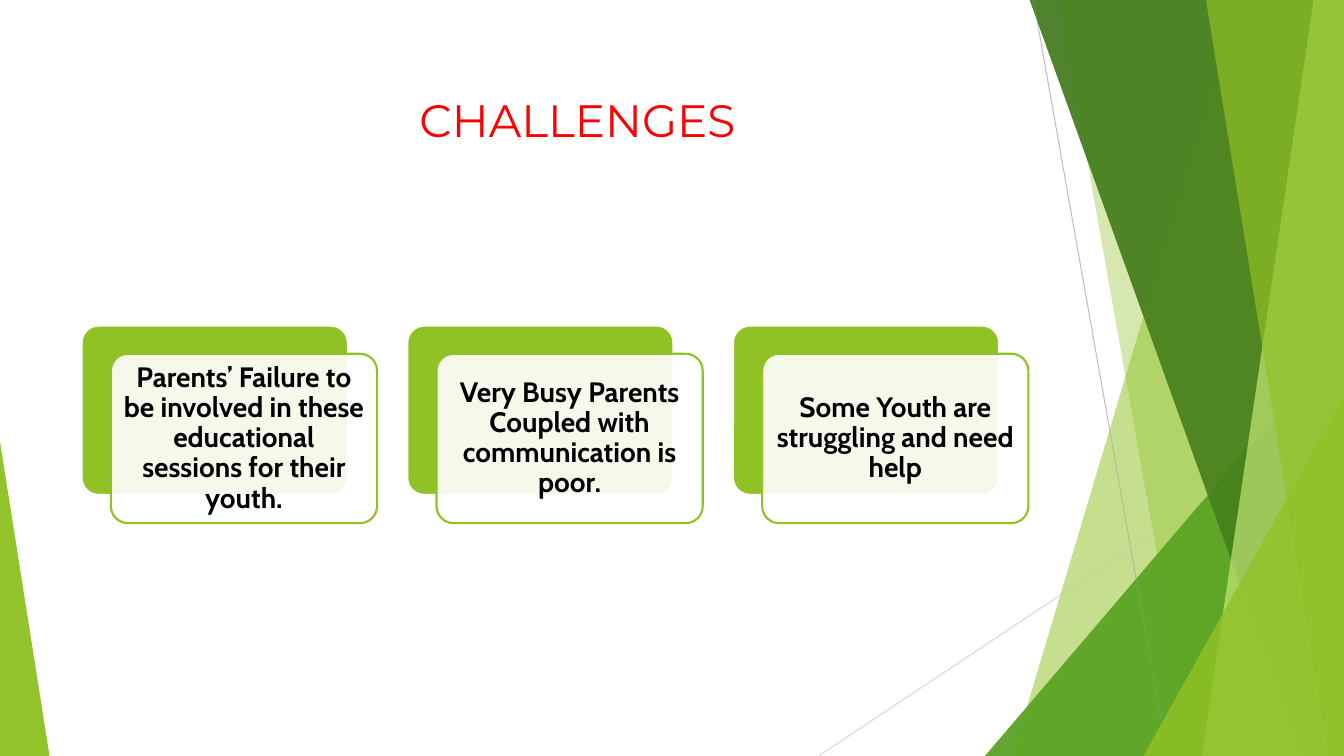
"""Build the Challenges slide with its faceted green backdrop and three cards."""
from lxml import etree
from pptx import Presentation
from pptx.dml.color import RGBColor
from pptx.enum.shapes import MSO_CONNECTOR, MSO_SHAPE as Shape
from pptx.enum.text import MSO_ANCHOR as Anchor, MSO_AUTO_SIZE as AutoSize, PP_ALIGN as Align
from pptx.oxml.ns import qn
from pptx.util import Inches, Pt

LIME = RGBColor(0x90, 0xC2, 0x26)
GREEN = RGBColor(0x54, 0xA0, 0x21)
DARK_GREEN = RGBColor(0x3F, 0x78, 0x19)
PALE_LIME = RGBColor(0xC0, 0xE4, 0x74)
GRAY = RGBColor(0xBF, 0xBF, 0xBF)
LIGHT_GRAY = RGBColor(0xD9, 0xD9, 0xD9)
WHITE = RGBColor(0xFF, 0xFF, 0xFF)
BLACK = RGBColor(0x00, 0x00, 0x00)
RED = RGBColor(0xFF, 0x00, 0x00)

WIDTH, HEIGHT, TOP = 13.33, 7.5, -0.01


def paint(shape, color, opacity=100, outline=None):
    shape.shadow.inherit = False
    shape.fill.solid()
    shape.fill.fore_color.rgb = color
    if opacity < 100:
        fill_color = shape.fill._xPr.find(f"{qn('a:solidFill')}/{qn('a:srgbClr')}")
        etree.SubElement(fill_color, qn("a:alpha"), val=str(opacity * 1000))
    if outline is None:
        shape.line.fill.background()
    else:
        shape.line.color.rgb = outline
        shape.line.width = Pt(1.5)


def write(shape, text, font, size, color, bold=False, align=Align.LEFT,
          anchor=Anchor.MIDDLE, line_spacing=1.0, margins=(0.1, 0.05)):
    frame = shape.text_frame
    frame.word_wrap = True
    frame.auto_size = AutoSize.NONE
    frame.vertical_anchor = anchor
    frame.margin_left = frame.margin_right = Inches(margins[0])
    frame.margin_top = frame.margin_bottom = Inches(margins[1])
    paragraph = frame.paragraphs[0]
    paragraph.alignment = align
    paragraph.line_spacing = line_spacing
    run = paragraph.add_run()
    run.text = text
    run.font.name = font
    run.font.size = Pt(size)
    run.font.bold = bold
    run.font.color.rgb = color


presentation = Presentation()
presentation.slide_width = Inches(WIDTH)
presentation.slide_height = Inches(HEIGHT)
slide = presentation.slides.add_slide(presentation.slide_layouts[5])
title = slide.shapes.title

# Bands give top-left, top-right and bottom-left x; triangles give left, top, width and apex.
bands_and_triangles = [
    ("band", (12.28, 10.04), LIME, 30),
    ("band", (10.5, 11.83), LIME, 20),
    ("triangle", (9.77, 3.33, 3.56, 1), GREEN, 72),
    ("band", (10.21, 12.91), DARK_GREEN, 70),
    ("band", (13.03, 11.92), PALE_LIME, 70),
    ("band", (11.96, 13.18), LIME, 65),
    ("triangle", (11.34, 3.93, 1.99, 1), LIME, 80),
    ("triangle", (0, 4.39, 0.49, 0), LIME, 85),
]
rays = [
    ((10.25, 0), (11.58, HEIGHT), GRAY),
    ((WIDTH, 4.03), (8.12, HEIGHT), LIGHT_GRAY),
]

for layer in ("back", "front"):
    if layer == "front":
        for start, end, color in rays:
            ray = slide.shapes.add_connector(
                MSO_CONNECTOR.STRAIGHT, *map(Inches, start + end))
            ray.line.color.rgb = color
            ray.line.width = Pt(0.75)
            etree.SubElement(ray._element.spPr, qn("a:effectLst"))
    for kind, geometry, color, opacity in bands_and_triangles:
        if kind == "band":
            top_x, bottom_x = geometry
            builder = slide.shapes.build_freeform(Inches(top_x), Inches(TOP))
            corners = [(WIDTH, TOP), (WIDTH, HEIGHT), (bottom_x, HEIGHT)]
            builder.add_line_segments([(Inches(x), Inches(y)) for x, y in corners])
            facet = builder.convert_to_shape()
        else:
            left, top, width, apex = geometry
            facet = slide.shapes.add_shape(
                Shape.ISOSCELES_TRIANGLE, Inches(left), Inches(top),
                Inches(width), Inches(HEIGHT - top))
            facet.adjustments[0] = apex
        paint(facet, color, opacity)

title.left, title.top = Inches(4.06), Inches(0.29)
title.width, title.height = Inches(3.6), Inches(1.21)
write(title, "CHALLENGES", "Montserrat", 32.4, RED, anchor=Anchor.BOTTOM)

challenges = [
    "Parents’ Failure to be involved in these educational sessions for their youth.",
    "Very Busy Parents Coupled with communication is poor.",
    "Some Youth are struggling and need help",
]
for index, challenge in enumerate(challenges):
    left = 0.81 + 3.23 * index
    for offset_x, offset_y, color, opacity, outline in [
            (0, 0, LIME, 100, WHITE), (0.29, 0.28, WHITE, 90, LIME)]:
        card = slide.shapes.add_shape(
            Shape.ROUNDED_RECTANGLE, Inches(left + offset_x), Inches(3.23 + offset_y),
            Inches(2.64), Inches(1.68))
        card.adjustments[0] = 0.1
        paint(card, color, opacity, outline)
    write(card, challenge, "Cabin", 20, BLACK, bold=True, align=Align.CENTER,
          line_spacing=0.9, margins=(0.08, 0.08))

presentation.save("out.pptx")
